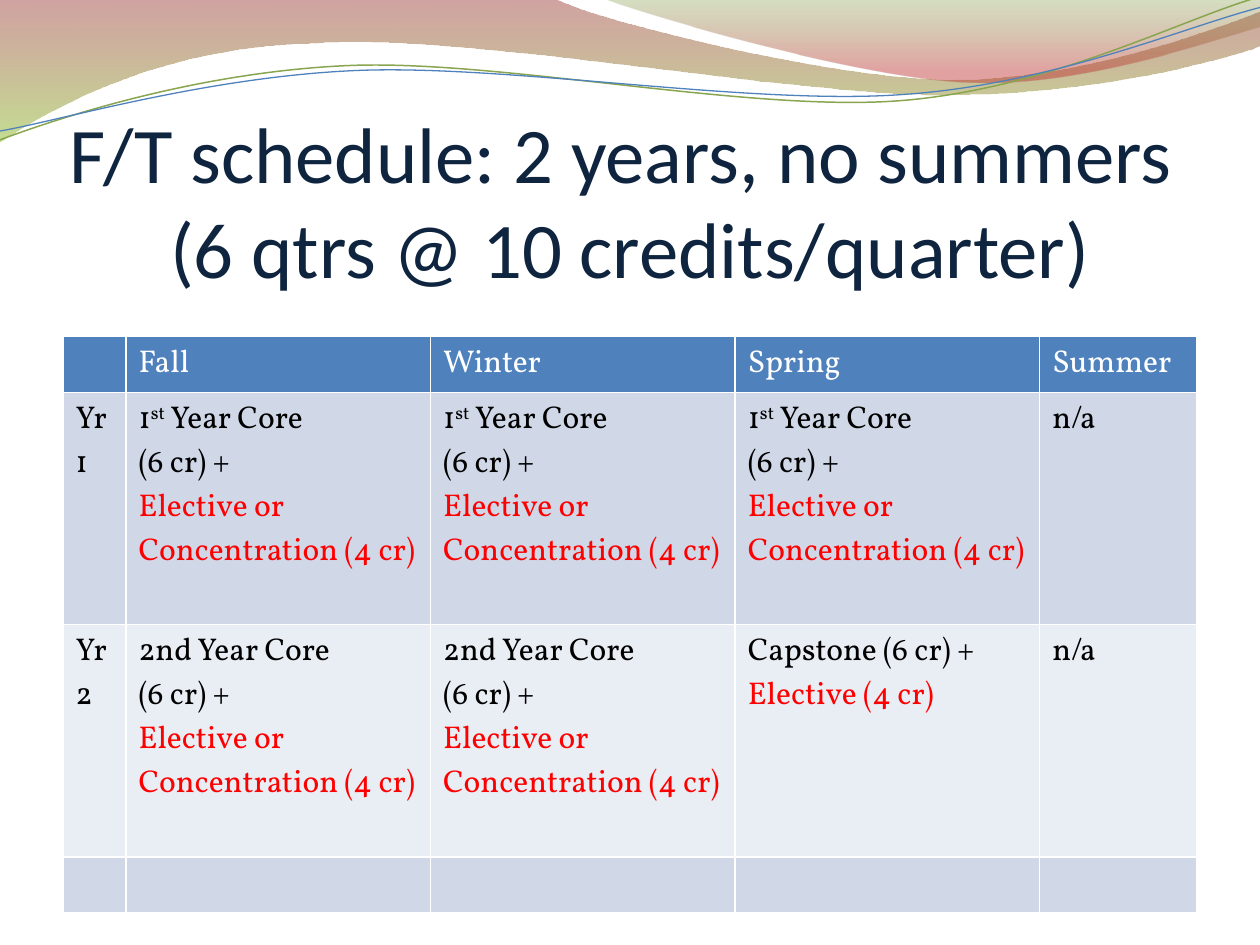
from dataclasses import dataclass
from math import cos, radians, sin

from lxml import etree
from pptx import Presentation
from pptx.dml.color import RGBColor
from pptx.enum.text import MSO_ANCHOR, PP_ALIGN
from pptx.oxml.ns import qn
from pptx.util import Cm, Pt

BOTTOM = MSO_ANCHOR.BOTTOM
CENTER = PP_ALIGN.CENTER
CM_PER_INCH = 2.54
TILT = 2.7
BLACK, WHITE, RED, NAVY = "000000", "FFFFFF", "FF0000", "0F243E"
HEADER_FILL, BAND_FILLS = "4F81BD", ("D0D8E8", "E9EDF4")
TITLE_FONT = {"size": Pt(45), "name": "Calibri", "bold": False}
TABLE_FONT = {"size": Pt(18), "name": "Vollkorn", "bold": False}


@dataclass
class Span:
    text: str
    color: str = BLACK
    raised: bool = False


@dataclass
class Stop:
    position: float
    color: str
    opacity: int


@dataclass
class Wave:
    """Outline in inches: one point makes a line, three make a Bézier curve."""
    start: tuple
    segments: list
    stops: tuple = ()
    line_color: str = ""
    line_width: float = 0
    pivot: tuple = ()


WAVES = [
    Wave((0, 0), [
        [(4.4, -0.01)], [(4.76, 0.17), (6.64, 0.63), (7.58, 0.63)],
        [(8.53, 0.63), (9.58, 0.26), (10, 0.09)], [(10.01, 0.36)],
        [(9.83, 0.44), (8.7, 0.76), (7.46, 0.75)],
        [(6.22, 0.75), (3.82, 0.28), (2.57, 0.34)],
        [(1.29, 0.36), (0.46, 0.83), (-0.01, 1.13)], [(0, 0)]],
        stops=(Stop(0, "973330", 45), Stop(1, "95C238", 55))),
    Wave((4.79, -0.01), [
        [(5.09, 0.11), (6.82, 0.62), (7.69, 0.65)],
        [(8.56, 0.69), (9.61, 0.32), (10, 0.21)], [(10, 0)], [(4.79, -0.01)]],
        stops=(Stop(0, "769537", 30), Stop(0.8, "BE3330", 45))),
    Wave((0, 1.11), [
        [(0.48, 0.93), (1.58, 0.57), (2.77, 0.52)],
        [(3.95, 0.47), (5.93, 0.89), (7.13, 0.8)],
        [(8.33, 0.71), (9.38, 0.15), (9.98, -0.02)]],
        line_color="89A54F", line_width=0.85, pivot=(4.99, 0.58)),
    Wave((0, 1.04), [
        [(0.47, 0.96), (1.64, 0.61), (2.83, 0.56)],
        [(4.03, 0.51), (5.97, 0.84), (7.17, 0.75)],
        [(8.36, 0.67), (9.41, 0.21), (10, 0.06)]],
        line_color="4F81BD", line_width=0.75, pivot=(5, 0.59)),
]

CREDITS = [Span("(6 cr) +")]
ELECTIVE = [Span("Elective or Concentration (4 cr)", RED)]
FIRST_CORE = [[Span("1"), Span("st", raised=True), Span(" Year Core")], CREDITS, ELECTIVE]
SECOND_CORE = [[Span("2nd Year Core")], CREDITS, ELECTIVE]
CAPSTONE = [[Span("Capstone (6 cr) + "), Span("Elective (4 cr)", RED)]]
NO_CLASSES = [[Span("n/a")]]
SCHEDULE = [
    [[]] + [[[Span(term, WHITE)]] for term in ("Fall", "Winter", "Spring", "Summer")],
    [[[Span("Yr")], [Span("1")]]] + [FIRST_CORE] * 3 + [NO_CLASSES],
    [[[Span("Yr 2")]], SECOND_CORE, SECOND_CORE, CAPSTONE, NO_CLASSES],
    [[]] * 5,
]
COLUMN_WIDTHS = (1.27, 6.14, 6.14, 6.14, 3.17)
ROW_HEIGHTS = (1.13, 4.68, 4.69, 1.13)


def rgb(code: str) -> RGBColor:
    return RGBColor.from_string(code)


def add_span(para, span: Span, font: dict) -> None:
    run = para.add_run()
    run.text = span.text
    for name, value in font.items():
        setattr(run.font, name, value)
    run.font.color.rgb = rgb(span.color)
    if span.raised:
        run._r.get_or_add_rPr().set("baseline", "30000")


def place(point: tuple, pivot: tuple) -> tuple:
    x, y = point
    if pivot:
        dx, dy, turn = x - pivot[0], y - pivot[1], radians(TILT)
        x = pivot[0] + dx * cos(turn) - dy * sin(turn)
        y = pivot[1] + dx * sin(turn) + dy * cos(turn)
    return Cm(x * CM_PER_INCH), Cm(y * CM_PER_INCH)


def bend_segments(shape, segments: list) -> None:
    lines = iter(list(shape._element.spPr.iter(qn("a:lnTo"))))
    for segment in segments:
        first, *others = [next(lines) for _ in segment]
        if others:
            first.tag = qn("a:cubicBezTo")
            for line in others:
                first.append(line[0])
                line.getparent().remove(line)


def draw_wave(page, wave: Wave) -> None:
    builder = page.shapes.build_freeform(*place(wave.start, wave.pivot))
    builder.add_line_segments([place(point, wave.pivot) for segment in wave.segments
                               for point in segment], close=bool(wave.stops))
    shape = builder.convert_to_shape()
    bend_segments(shape, wave.segments)
    shape.shadow.inherit = False
    if not wave.stops:
        shape.rotation = 360 - TILT
        shape.fill.background()
        shape.line.color.rgb = rgb(wave.line_color)
        shape.line.width = Pt(wave.line_width)
        return
    shape.line.fill.background()
    shape.fill.gradient()
    shape.fill.gradient_angle = 270
    for target, stop in zip(shape.fill.gradient_stops, wave.stops):
        target.position = stop.position
        target.color.rgb = rgb(stop.color)
    for color, stop in zip(shape._element.spPr.iter(qn("a:srgbClr")), wave.stops):
        etree.SubElement(color, qn("a:alpha")).set("val", str(stop.opacity * 1000))


def draw_title(page, lines: tuple) -> None:
    box = page.shapes.add_textbox(Cm(1.27), Cm(2.75), Cm(22.86), Cm(3.18))
    frame = box.text_frame
    layout = {"word_wrap": True, "vertical_anchor": BOTTOM, "margin_left": 0,
              "margin_right": 0, "margin_top": Cm(0.13), "margin_bottom": 0}
    for name, value in layout.items():
        setattr(frame, name, value)
    para = frame.paragraphs[0]
    para.alignment = CENTER
    for index, line in enumerate(lines):
        if index:
            para.add_line_break()
        add_span(para, Span(line, NAVY), TITLE_FONT)


def add_borders(cell) -> None:
    properties = cell._tc.get_or_add_tcPr()
    for side in "LRTB":
        border = etree.SubElement(properties, qn(f"a:ln{side}"), w=str(Pt(1)))
        fill = etree.SubElement(border, qn("a:solidFill"))
        etree.SubElement(fill, qn("a:srgbClr"), val=WHITE)


def fill_cell(cell, paragraphs: list, color: str) -> None:
    add_borders(cell)
    cell.fill.solid()
    cell.fill.fore_color.rgb = rgb(color)
    frame = cell.text_frame
    for index, spans in enumerate(paragraphs):
        para = frame.add_paragraph() if index else frame.paragraphs[0]
        for span in spans:
            add_span(para, span, TABLE_FONT)


def draw_schedule(page) -> None:
    table = page.shapes.add_table(len(ROW_HEIGHTS), len(COLUMN_WIDTHS), Cm(1.27), Cm(6.78),
                                  Cm(sum(COLUMN_WIDTHS)), Cm(sum(ROW_HEIGHTS))).table
    for column, width in zip(table.columns, COLUMN_WIDTHS):
        column.width = Cm(width)
    for row, height in zip(table.rows, ROW_HEIGHTS):
        row.height = Cm(height)
    for row, entries in enumerate(SCHEDULE):
        color = BAND_FILLS[(row - 1) % 2] if row else HEADER_FILL
        for column, paragraphs in enumerate(entries):
            fill_cell(table.cell(row, column), paragraphs, color)


def main() -> None:
    deck = Presentation()
    deck.slide_width, deck.slide_height = Cm(25.4), Cm(19.05)
    page = deck.slides.add_slide(deck.slide_layouts[6])
    for wave in WAVES:
        draw_wave(page, wave)
    draw_title(page, ("F/T schedule: 2 years, no summers ", "(6 qtrs @ 10 credits/quarter)"))
    draw_schedule(page)
    deck.save("out.pptx")


if __name__ == "__main__":
    main()
